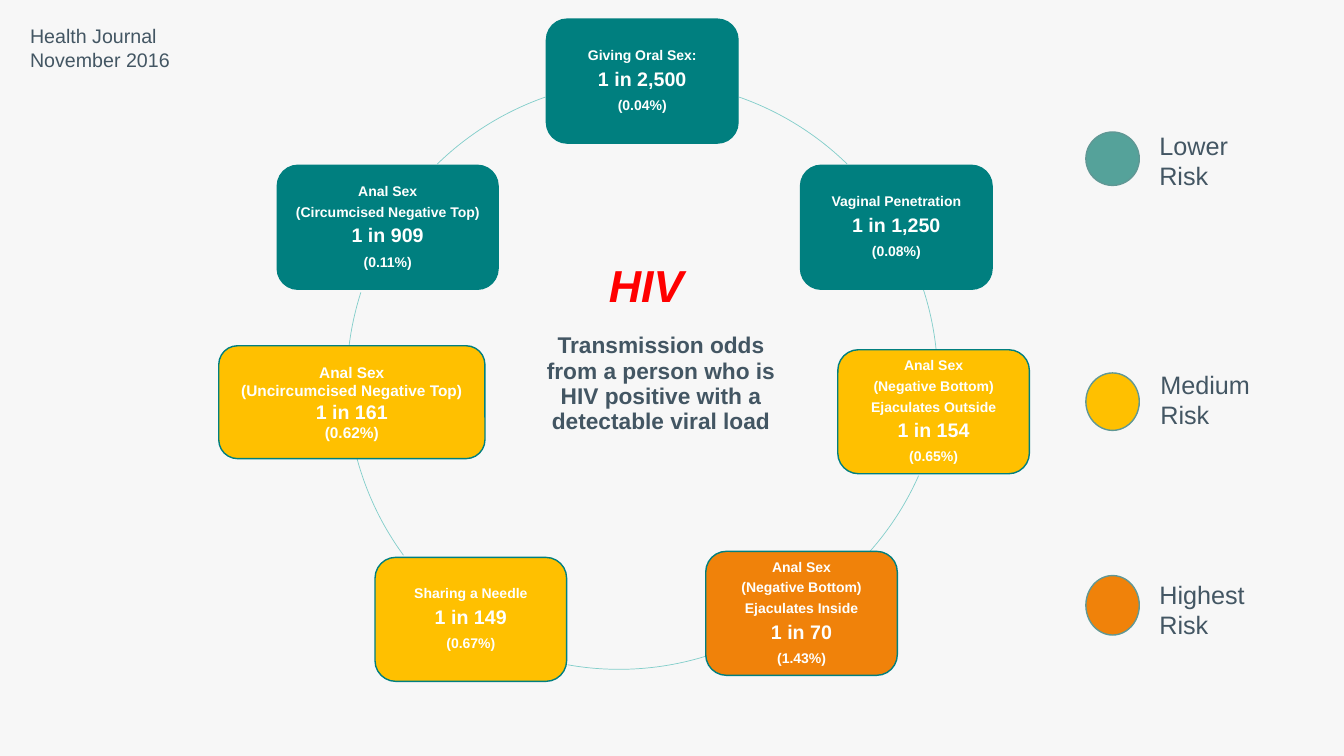
from pptx import Presentation
from pptx import util as u
from pptx.dml import color
from pptx.enum import shapes, text

COLORS = {
    "background": "F7F7F7", "teal": "007F7F", "yellow": "FFC000",
    "orange": "F0820A", "pale_teal": "55A29A", "ring": "82CECA",
    "legend_line": "609895", "slate": "435663", "white": "FEFFFE", "red": "FF0000",
}
CENTER, LEFT = text.PP_ALIGN.CENTER, text.PP_ALIGN.LEFT


def rgb(name):
    return color.RGBColor.from_string(COLORS[name])


def write_lines(frame, lines, ink, paragraph_format, **font_format):
    """Write (text, size, space after) lines as paragraphs sharing one format."""
    frame.word_wrap = True
    for index, (words, size, space_after) in enumerate(lines):
        paragraph = frame.paragraphs[0] if index == 0 else frame.add_paragraph()
        paragraph.text = words
        for name, value in paragraph_format.items():
            setattr(paragraph, name, value)
        paragraph.space_before = u.Pt(0)
        paragraph.space_after = u.Pt(space_after)
        font = paragraph.font
        for name, value in {"name": "Arial", "size": u.Pt(size), **font_format}.items():
            setattr(font, name, value)
        font.color.rgb = rgb(ink)


presentation = Presentation()
presentation.slide_width = u.Inches(13.33)
presentation.slide_height = u.Inches(7.5)
slide = presentation.slides.add_slide(presentation.slide_layouts[5])
slide.background.fill.solid()
slide.background.fill.fore_color.rgb = rgb("background")

# Title in the middle of the ring
title = slide.shapes.title
title.left, title.top, title.width, title.height = map(u.Inches, (5.15, 3.26, 2.81, 1.29))
title.text_frame.auto_size = text.MSO_AUTO_SIZE.NONE
title.text_frame.vertical_anchor = text.MSO_ANCHOR.TOP
write_lines(
    title.text_frame,
    [("Transmission odds from a person who is HIV positive with a detectable viral load", 16.2, 0)],
    "slate", {"alignment": CENTER, "line_spacing": 0.93}, bold=True)

# Ring segments: left and top of the circle, then start and end angle in degrees
RING_DIAMETER = 5.82
ring_segments = [
    (3.46, 0.80, 289.3, 314.3),
    (3.48, 0.86, 342.1, 354.1),
    (3.54, 0.63, 23.9, 41.5),
    (3.23, 0.82, 73.0, 100.1),
    (3.44, 0.88, 143.8, 197.8),
    (3.46, 0.80, 225.7, 250.7),
]
for left, top, start, end in ring_segments:
    segment = slide.shapes.add_shape(
        shapes.MSO_SHAPE.ARC, u.Inches(left), u.Inches(top),
        u.Inches(RING_DIAMETER), u.Inches(RING_DIAMETER))
    for index, angle in enumerate((start, end)):
        segment.adjustments[index] = angle * 0.6  # 60000 units a degree, scaled by 100000
    segment.shadow.inherit = False
    segment.fill.background()
    segment.line.color.rgb = rgb("ring")
    segment.line.width = u.Pt(0.5)

# Risk cards: place, fill, label lines, odds, percentage
cards = [
    (5.42, 0.19, 1.9, 1.23, "teal", ["Giving Oral Sex:"], "1 in 2,500", "(0.04%)"),
    (7.94, 1.64, 1.9, 1.23, "teal", ["Vaginal Penetration"], "1 in 1,250", "(0.08%)"),
    (8.31, 3.47, 1.9, 1.23, "yellow",
     ["Anal Sex", "(Negative Bottom)", "Ejaculates Outside"], "1 in 154", "(0.65%)"),
    (7.0, 5.47, 1.9, 1.23, "orange",
     ["Anal Sex", "(Negative Bottom)", "Ejaculates Inside"], "1 in 70", "(1.43%)"),
    (3.72, 5.53, 1.9, 1.23, "yellow", ["Sharing a Needle"], "1 in 149", "(0.67%)"),
    (2.75, 1.64, 2.19, 1.23, "teal",
     ["Anal Sex", "(Circumcised Negative Top)"], "1 in 909", "(0.11%)"),
    (2.17, 3.43, 2.64, 1.12, "yellow",
     ["Anal Sex", "(Uncircumcised Negative Top)"], "1 in 161", "(0.62%)"),
]
for left, top, width, height, fill, labels, odds, percentage in cards:
    card = slide.shapes.add_shape(
        shapes.MSO_SHAPE.ROUNDED_RECTANGLE, *map(u.Inches, (left, top, width, height)))
    card.shadow.inherit = False
    card.fill.solid()
    card.fill.fore_color.rgb = rgb(fill)
    card.line.color.rgb = rgb("teal")
    card.line.width = u.Pt(1)
    frame = card.text_frame
    frame.vertical_anchor = text.MSO_ANCHOR.MIDDLE
    for side in ("left", "right", "top", "bottom"):
        setattr(frame, f"margin_{side}", u.Inches(0.04))
    wide = width > 2.5  # the widest card has larger, tightly set text
    size, gap, odds_gap, spacing = (11, 0, 0, 1.0) if wide else (10, 4, 5.6, 0.9)
    lines = [(label, size, gap) for label in labels]
    lines += [(odds, 14, odds_gap), (percentage, size, gap)]
    write_lines(frame, lines, "white",
                {"alignment": CENTER, "line_spacing": spacing}, bold=True)

# Legend circles: top, height, fill
for top, height, fill in [(1.31, 0.53, "pale_teal"), (3.7, 0.57, "yellow"), (5.71, 0.59, "orange")]:
    circle = slide.shapes.add_shape(
        shapes.MSO_SHAPE.OVAL, *map(u.Inches, (10.77, top, 0.53, height)))
    circle.shadow.inherit = False
    circle.fill.solid()
    circle.fill.fore_color.rgb = rgb(fill)
    circle.line.color.rgb = rgb("legend_line")
    circle.line.width = u.Pt(1)

# Free text: place, lines, size, colour, font format
captions = [
    (5.94, 2.51, 1.95, 0.64, ["HIV"], 32, "red", {"bold": True, "italic": True}),
    (11.4, 1.24, 1.46, 0.71, ["Lower", "Risk"], 18, "slate", {}),
    (11.41, 3.61, 1.38, 0.71, ["Medium", "Risk"], 18, "slate", {}),
    (11.4, 5.7, 1.38, 0.71, ["Highest Risk"], 18, "slate", {}),
    (0.2, 0.19, 2.77, 0.57, ["Health Journal", "November 2016"], 14, "slate", {}),
]
for left, top, width, height, words, size, ink, font_format in captions:
    caption = slide.shapes.add_textbox(*map(u.Inches, (left, top, width, height)))
    write_lines(caption.text_frame, [(line, size, 0) for line in words], ink,
                {"alignment": LEFT}, **font_format)

presentation.save("out.pptx")
